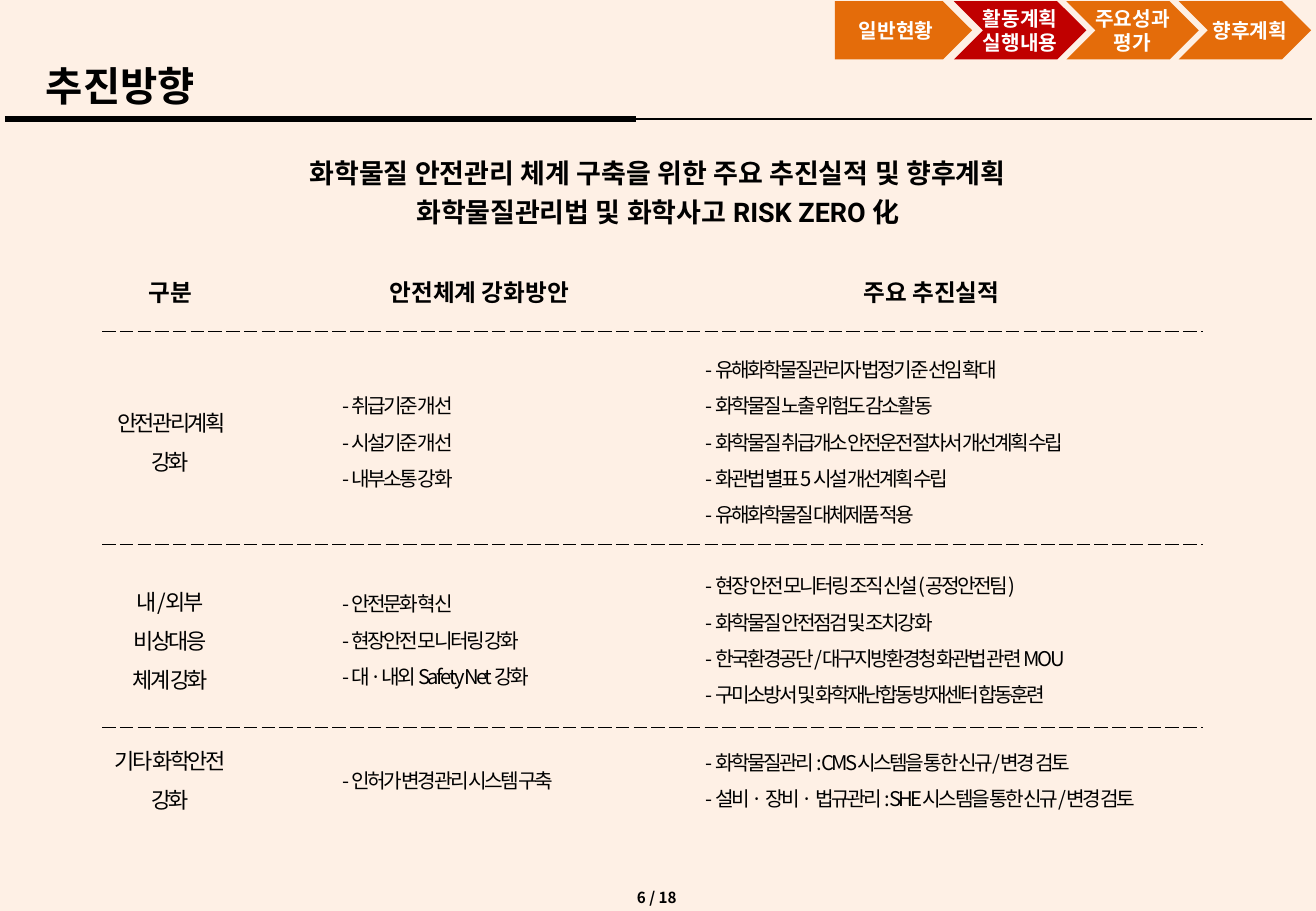
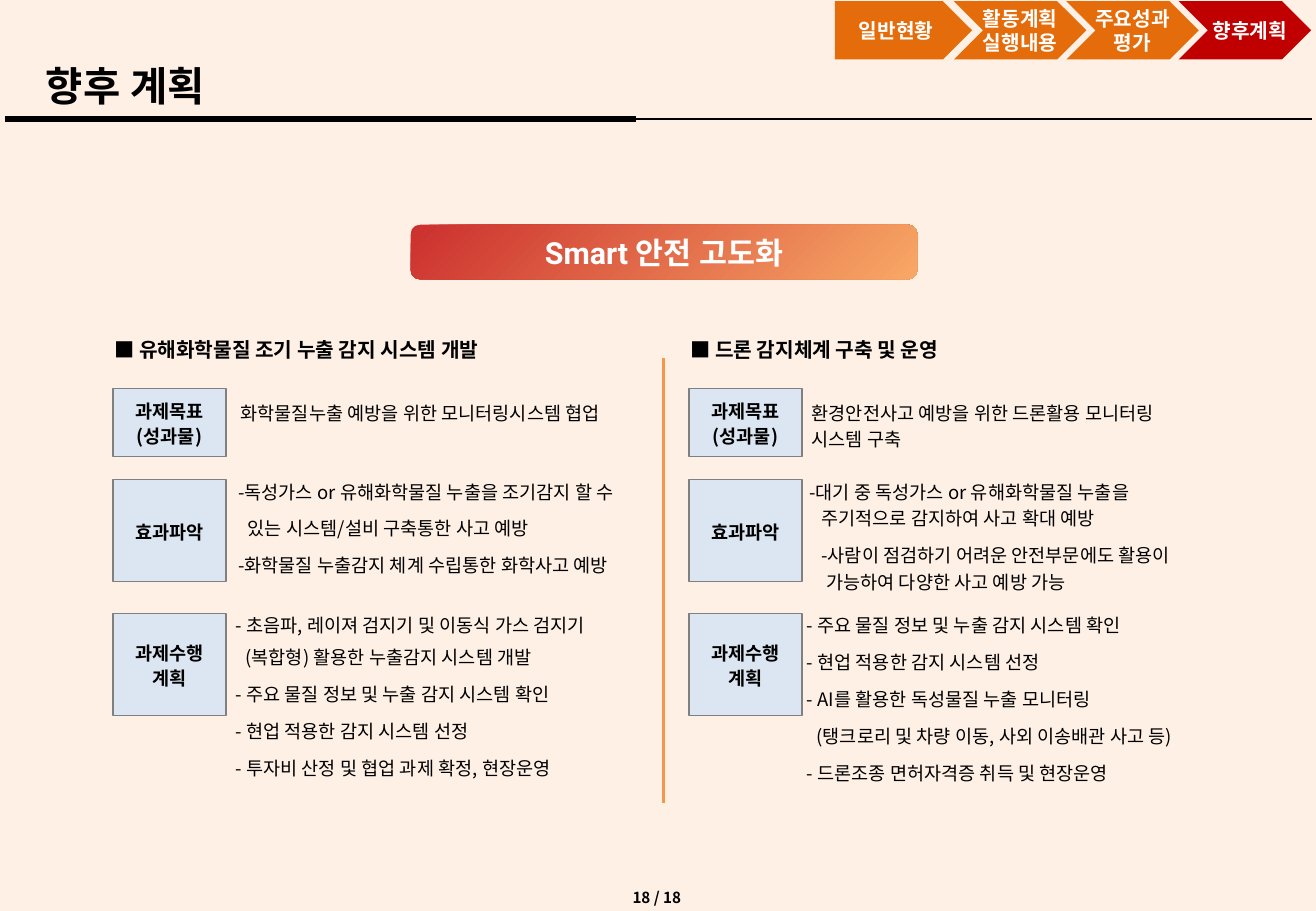
from lxml.etree import SubElement
from pptx import Presentation
from pptx.dml.color import RGBColor
from pptx.enum.shapes import MSO_CONNECTOR, MSO_SHAPE as SHAPE
from pptx.enum.text import MSO_ANCHOR as ANCHOR, PP_ALIGN as ALIGN
from pptx.oxml import parse_xml
from pptx.oxml.ns import nsdecls, qn
from pptx.util import Inches, Pt

INK, WHITE, PAPER = "000000", "FFFFFF", "FEF0E5"
ORANGE, RED, AMBER = "E46C0A", "C00000", "F79646"
CARD, CARD_EDGE = "DCE6F2", "808080"
BANNER_LIGHT, BANNER_DARK = "F8A866", "CC302E"
NOTO, ROBOTO = "Noto Sans CJK KR", "Roboto"
NO_STYLE_TABLE = "{2D5ABB26-0587-4C30-8999-92F81FD0307C}"

# Each style: size, bold, font, colour, line spacing, alignment, tracking
STYLES = {
    "title": (24, True, ROBOTO, INK, 1.2, ALIGN.LEFT, 0),
    "subtitle": (16, True, ROBOTO, INK, 1.2, ALIGN.CENTER, 0),
    "footer": (9, True, NOTO, INK, 1, ALIGN.CENTER, 0),
    "nav": (12, True, NOTO, WHITE, 1, ALIGN.CENTER, 0),
    "banner": (18, True, ROBOTO, WHITE, 1, ALIGN.CENTER, 0),
    "table_head": (14, True, NOTO, INK, 1, ALIGN.CENTER, 0),
    "table_label": (13, False, NOTO, INK, 1.24, ALIGN.CENTER, -150),
    "table_body": (12, False, NOTO, INK, 1.24, ALIGN.JUSTIFY, -150),
    "heading": (12, True, NOTO, INK, 1.2, ALIGN.LEFT, 0),
    "card": (11, True, NOTO, INK, 1.1, ALIGN.CENTER, 0),
    "body": (11, False, NOTO, INK, 1.2, ALIGN.LEFT, 0),
}

NAV_STEPS = ["일반현황", "활동계획\n실행내용", "주요성과\n평가", "향후계획"]
NAV_TEXT_INSETS = [0, 0, 0, 0.08]

DIRECTION_HEAD = ["구분", "안전체계 강화방안", "주요 추진실적"]
DIRECTION_ROWS = [
    ["안전관리계획 강화",
     "- 취급기준 개선\n- 시설기준 개선\n- 내부소통 강화",
     "- 유해화학물질관리자 법정기준 선임 확대\n- 화학물질 노출 위험도 감소활동\n"
     "- 화학물질 취급개소 안전운전절차서 개선계획 수립\n"
     "- 화관법 별표5 시설 개선계획 수립\n- 유해화학물질 대체제품 적용"],
    ["내/외부\n비상대응\n체계 강화",
     "- 안전문화 혁신\n- 현장안전 모니터링 강화\n- 대·내외 Safety Net 강화",
     "- 현장 안전 모니터링 조직 신설(공정안전팀)\n- 화학물질 안전점검 및 조치강화\n"
     "- 한국환경공단/대구지방환경청 화관법 관련 MOU\n"
     "- 구미소방서 및 화학재난합동방재센터 합동훈련"],
    ["기타 화학안전\n강화",
     "- 인허가 변경관리 시스템 구축",
     "- 화학물질관리 : CMS시스템을 통한 신규/변경 검토\n"
     "- 설비 · 장비 · 법규관리 : SHE시스템을 통한 신규/변경 검토"],
]

# Card rows: label, top, height, shift of the text from the card
CARD_ROWS = [
    ("과제목표\n(성과물)", 3.2, 0.56, 0.02, 0.03),
    ("효과파악", 3.95, 0.84, 0, -0.07),
    ("과제수행\n계획", 5.05, 0.84, -0.02, -0.07),
]

# Texts of a card row: text, and per paragraph (space before, left margin, first-line indent)
FLUSH, TIGHT, INSET = (6, 0, 0), (3, 0.08, 0), (6, 0.08, 0)
LEAK_PLAN = [
    ("화학물질누출 예방을 위한 모니터링시스템 협업", [FLUSH]),
    ("-독성가스 or 유해화학물질 누출을 조기감지 할 수\n있는 시스템/설비 구축통한 사고 예방\n"
     "-화학물질 누출감지 체계 수립통한 화학사고 예방", [FLUSH, INSET, FLUSH]),
    ("- 초음파, 레이져 검지기 및 이동식 가스 검지기\n(복합형) 활용한 누출감지 시스템 개발\n"
     "- 주요 물질 정보 및 누출 감지 시스템 확인\n- 현업 적용한 감지 시스템 선정\n"
     "- 투자비 산정 및 협업 과제 확정, 현장운영", [FLUSH, TIGHT, FLUSH, FLUSH, FLUSH]),
]
DRONE_PLAN = [
    ("환경안전사고 예방을 위한 드론활용 모니터링\v시스템 구축", [FLUSH]),
    ("-대기 중 독성가스 or 유해화학물질 누출을\v주기적으로 감지하여 사고 확대 예방\n"
     "-사람이 점검하기 어려운 안전부문에도 활용이\v가능하여 다양한 사고 예방 가능",
     [(6, 0.1, -0.1), (6, 0.14, -0.04)]),
    ("- 주요 물질 정보 및 누출 감지 시스템 확인\n- 현업 적용한 감지 시스템 선정\n"
     "- AI를 활용한 독성물질 누출 모니터링\n(탱크로리 및 차량 이동, 사외 이송배관 사고 등)\n"
     "- 드론조종 면허자격증 취득 및 현장운영", [FLUSH, FLUSH, FLUSH, INSET, FLUSH]),
]


def rgb(value):
    return RGBColor.from_string(value)


def apply(target, values):
    for name, value in values.items():
        setattr(target, name, value)


def set_margins(target, left, top, right, bottom):
    apply(target, {"margin_left": Inches(left), "margin_top": Inches(top),
                   "margin_right": Inches(right), "margin_bottom": Inches(bottom)})


def write(frame, text, style, layout=None):
    """Fill a text frame: \\n starts a paragraph, \\v a new line within it."""
    size, bold, font, colour, spacing, align, tracking = STYLES[style]
    for i, paragraph_text in enumerate(text.split("\n")):
        para = frame.add_paragraph() if i else frame.paragraphs[0]
        apply(para, {"alignment": align, "line_spacing": spacing})
        if layout:
            before, margin, indent = layout[i]
            if i:
                para.space_before = Pt(before)
            props = para._p.get_or_add_pPr()
            props.set("marL", str(Inches(margin)))
            props.set("indent", str(Inches(indent)))
        for j, line in enumerate(paragraph_text.split("\v")):
            if j:
                para.add_line_break()
            run = para.add_run()
            run.text = line
            apply(run.font, {"size": Pt(size), "bold": bold, "name": font})
            run.font.color.rgb = rgb(colour)
            run_props = run._r.get_or_add_rPr()
            SubElement(run_props, qn("a:ea")).set("typeface", font)
            if tracking:
                run_props.set("spc", str(tracking))


def add_text(slide, box, text, style, anchor=ANCHOR.TOP, margins=(0.1, 0.05, 0.1, 0.05),
             layout=None):
    frame = slide.shapes.add_textbox(*map(Inches, box)).text_frame
    apply(frame, {"word_wrap": True, "vertical_anchor": anchor})
    set_margins(frame, *margins)
    write(frame, text, style, layout)


def add_panel(slide, kind, box, text, style, fill=None, edge=None, inset=0):
    """Place a preset shape with centred, unwrapped text."""
    panel = slide.shapes.add_shape(kind, *map(Inches, box))
    panel.shadow.inherit = False
    if fill:
        panel.fill.solid()
        panel.fill.fore_color.rgb = rgb(fill)
    if edge:
        panel.line.color.rgb = rgb(edge)
        panel.line.width = Pt(0.75)
    else:
        panel.line.fill.background()
    apply(panel.text_frame, {"word_wrap": False, "vertical_anchor": ANCHOR.MIDDLE})
    set_margins(panel.text_frame, inset, 0, 0, 0)
    write(panel.text_frame, text, style)
    return panel


def add_rule(slide, x1, y1, x2, y2, colour, width):
    rule = slide.shapes.add_connector(MSO_CONNECTOR.STRAIGHT, *map(Inches, (x1, y1, x2, y2)))
    rule.line.color.rgb = rgb(colour)
    rule.line.width = Pt(width)
    SubElement(rule._element.spPr, qn("a:effectLst"))


def add_nav(slide, left, top, active):
    for i, (step, inset) in enumerate(zip(NAV_STEPS, NAV_TEXT_INSETS)):
        kind, x, width = (SHAPE.CHEVRON, left + 0.055 + 0.925 * i, 1.09) if i else (
            SHAPE.PENTAGON, left, 1.13)
        add_panel(slide, kind, (x, top, width, 0.48), step, "nav",
                  RED if i == active else ORANGE, inset=inset)


def add_frame_slide(deck, title, number, active):
    """Add a slide with the shared background, title, rules, steps and footer."""
    slide = deck.slides.add_slide(deck.slide_layouts[6])
    slide.background.fill.solid()
    slide.background.fill.fore_color.rgb = rgb(PAPER)
    add_text(slide, (4.85, 7.23, 1.11, 0.28), f"{number} / 18", "footer", ANCHOR.BOTTOM)
    add_text(slide, (0.28, 0.39, 6.5, 0.54), title, "title", ANCHOR.MIDDLE)
    add_rule(slide, 5.04, 0.98, 10.8, 0.98, INK, 0.75)
    add_rule(slide, 0.04, 0.98, 5.23, 0.98, INK, 3)
    add_nav(slide, 6.87, 0.01, active)
    return slide


def add_dashed_border(cell, sides):
    for position, side in enumerate(sides):
        cell._tc.get_or_add_tcPr().insert(position, parse_xml(
            f'<a:{side} {nsdecls("a")} w="{Pt(0.75)}"><a:solidFill><a:srgbClr val="{INK}"/>'
            f'</a:solidFill><a:prstDash val="dash"/></a:{side}>'))


def add_direction_table(slide, left, top):
    widths, heights = [1.12, 3.75, 4.19], [0.66, 1.75, 1.51, 0.8]
    head_margins = [(0, 0), (0.22, 0), (0, 0.28)]
    body_margins = [(0, 0), (0.86, 0), (0.1, 0)]
    rows = [DIRECTION_HEAD] + DIRECTION_ROWS
    table = slide.shapes.add_table(len(rows), len(widths), *map(
        Inches, (left, top, sum(widths), sum(heights)))).table
    apply(table, {"first_row": False, "horz_banding": False})
    table._tbl.tblPr.find(qn("a:tableStyleId")).text = NO_STYLE_TABLE
    for column, width in zip(table.columns, widths):
        column.width = Inches(width)
    for r, texts in enumerate(rows):
        table.rows[r].height = Inches(heights[r])
        for c, text in enumerate(texts):
            cell = table.cell(r, c)
            cell.fill.background()
            cell.vertical_anchor = ANCHOR.MIDDLE
            before, after = body_margins[c] if r else head_margins[c]
            set_margins(cell, before, 0, after, 0)
            style = "table_head" if r == 0 else "table_body" if c else "table_label"
            write(cell.text_frame, text, style)
            add_dashed_border(cell, ["lnT"] * (r > 0) + ["lnB"] * (r < len(rows) - 1))


def add_plan_column(slide, left, text_offset, heading, texts):
    margins = (0.04, 0.04, 0.1, 0.05)
    add_text(slide, (left - 0.03, 2.7, 4.5, 0.31), "■ " + heading, "heading", margins=margins)
    for (label, top, height, dx, dy), (text, layout) in zip(CARD_ROWS, texts):
        add_panel(slide, SHAPE.RECTANGLE, (left, top, 0.93, height), label, "card",
                  CARD, CARD_EDGE)
        add_text(slide, (left + text_offset + dx, top + dy, 3.66, height), text, "body",
                 margins=margins, layout=layout)


def add_banner(slide, box, text):
    banner = add_panel(slide, SHAPE.ROUNDED_RECTANGLE, box, text, "banner")
    banner.fill.gradient()
    banner.fill.gradient_angle = 315
    for stop, colour in zip(banner.fill.gradient_stops, (BANNER_DARK, BANNER_LIGHT)):
        stop.color.rgb = rgb(colour)


def build_direction(deck):
    slide = add_frame_slide(deck, "추진방향", 6, active=1)
    add_text(slide, (0, 1.19, 10.83, 0.75),
             "화학물질 안전관리 체계 구축을 위한 주요 추진실적 및 향후계획\n"
             "화학물질관리법 및 화학사고 RISK ZERO 化", "subtitle")
    add_direction_table(slide, 0.84, 2.07)


def build_future_plan(deck):
    slide = add_frame_slide(deck, "향후 계획", 18, active=3)
    add_banner(slide, (3.38, 1.85, 4.17, 0.45), "Smart 안전 고도화")
    add_rule(slide, 5.46, 2.95, 5.46, 6.61, AMBER, 2.25)
    add_plan_column(slide, 0.93, 0.99, "유해화학물질 조기 누출 감지 시스템 개발", LEAK_PLAN)
    add_plan_column(slide, 5.67, 0.95, "드론 감지체계 구축 및 운영", DRONE_PLAN)


def main():
    deck = Presentation()
    apply(deck, {"slide_width": Inches(10.83), "slide_height": Inches(7.5)})
    build_direction(deck)
    build_future_plan(deck)
    deck.save("out.pptx")


if __name__ == "__main__":
    main()
